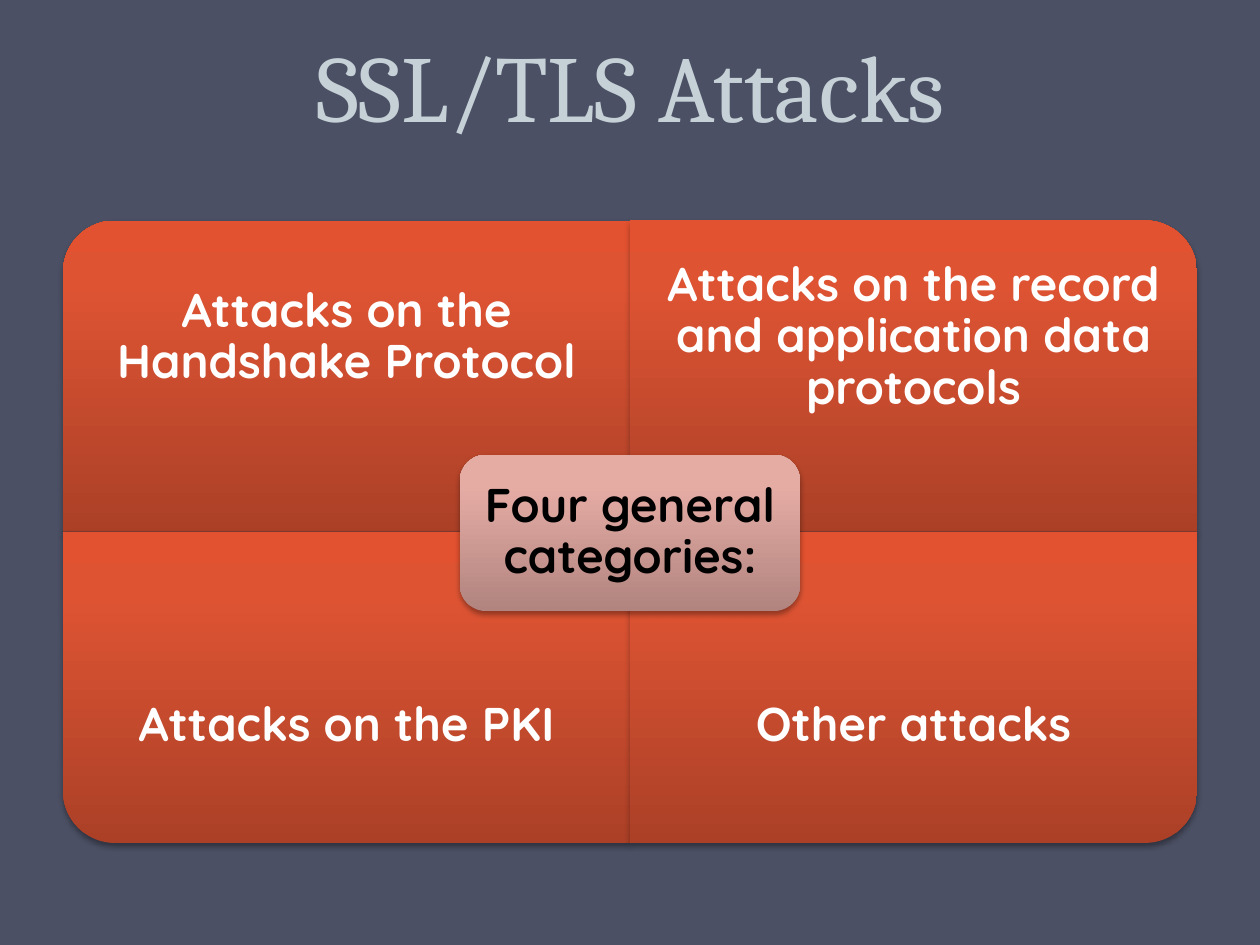
from lxml import etree
from pptx import Presentation
from pptx.dml.color import RGBColor
from pptx.enum import shapes, text
from pptx.oxml import parse_xml
from pptx.oxml.ns import nsdecls
from pptx.util import Inches, Pt

COLORS = {
    "bg": "4B5064", "title": "C5D1D7", "white": "FFFFFF", "black": "000000",
    "tile": ("AB4027", "DE5433", "E35230"),
    "center": ("B1847F", "E5ACA4", "E8ACA4"),
}


def add_text(s, content, box, *, font="Quicksand", size=27, color="white",
             bold=True, anchor=text.MSO_ANCHOR.MIDDLE, spacing=0.9, inset=None):
    sp = s.shapes.add_textbox(*map(Inches, box))
    tf = sp.text_frame
    tf.word_wrap = True
    tf.vertical_anchor = anchor
    if inset is not None:
        tf.margin_left = tf.margin_right = Inches(inset)
        tf.margin_top = tf.margin_bottom = Inches(inset)
    p = tf.paragraphs[0]
    p.alignment = text.PP_ALIGN.CENTER
    p.line_spacing = spacing
    r = p.add_run()
    r.text = content
    r.font.name = font
    r.font.size = Pt(size)
    r.font.bold = bold
    r.font.color.rgb = RGBColor.from_string(COLORS[color])


def add_panel(s, kind, box, colors, rotation=0):
    sp = s.shapes.add_shape(kind, *map(Inches, box))
    sp.rotation = rotation
    sp.line.fill.background()
    sp.fill.background()
    sp.shadow.inherit = False
    spPr = sp._element.spPr
    stops = "".join(f'<a:gs pos="{pos}"><a:srgbClr val="{c}"/></a:gs>'
                    for pos, c in zip((0, 80000, 100000), colors))
    grad = parse_xml(f'<a:gradFill {nsdecls("a")} rotWithShape="0"><a:gsLst>{stops}</a:gsLst>'
                     '<a:lin ang="16200000" scaled="0"/></a:gradFill>')
    ns = {"a": etree.QName(grad).namespace}
    spPr.replace(spPr.find("a:noFill", ns), grad)
    spPr.find("a:effectLst", ns).append(parse_xml(
        f'<a:outerShdw {nsdecls("a")} blurRad="{Pt(3.1)}" dist="{Pt(1.8)}" dir="5400000" '
        f'rotWithShape="0"><a:srgbClr val="{COLORS["black"]}"><a:alpha val="35000"/>'
        '</a:srgbClr></a:outerShdw>'))


prs = Presentation()
prs.slide_width, prs.slide_height = Inches(10), Inches(7.5)
s = prs.slides.add_slide(prs.slide_layouts[6])
s.background.fill.solid()
s.background.fill.fore_color.rgb = RGBColor.from_string(COLORS["bg"])

add_text(s, "SSL/TLS Attacks", (0.28, -0.58, 9.45, 1.75), font="Cambria", size=54,
         color="title", bold=False, anchor=text.MSO_ANCHOR.BOTTOM, spacing=Pt(58))

left, top, w, h, text_h = 0.5, 1.75, 4.5, 2.47, 1.86
tiles = [
    ("Attacks on the Handshake Protocol", 0, 0, 270),
    ("Attacks on the record and application data protocols", 1, 0, 0),
    ("Attacks on the PKI", 0, 1, 180),
    ("Other attacks", 1, 1, 90),
]
for label, col, row, rotation in tiles:
    x, y = left + col * w, top + row * h
    box = (x, y, w, h)
    if rotation % 180:
        box = (x + (w - h) / 2, y + (h - w) / 2, h, w)
    add_panel(s, shapes.MSO_SHAPE.ROUND_1_RECTANGLE, box, COLORS["tile"], rotation)
    add_text(s, label, (x, y + row * (h - text_h), w, text_h), inset=0.21)

add_panel(s, shapes.MSO_SHAPE.ROUNDED_RECTANGLE, (3.65, 3.61, 2.7, 1.24), COLORS["center"])
add_text(s, "Four general categories:", (3.71, 3.67, 2.58, 1.12), color="black", inset=0.11)

prs.save("out.pptx")
